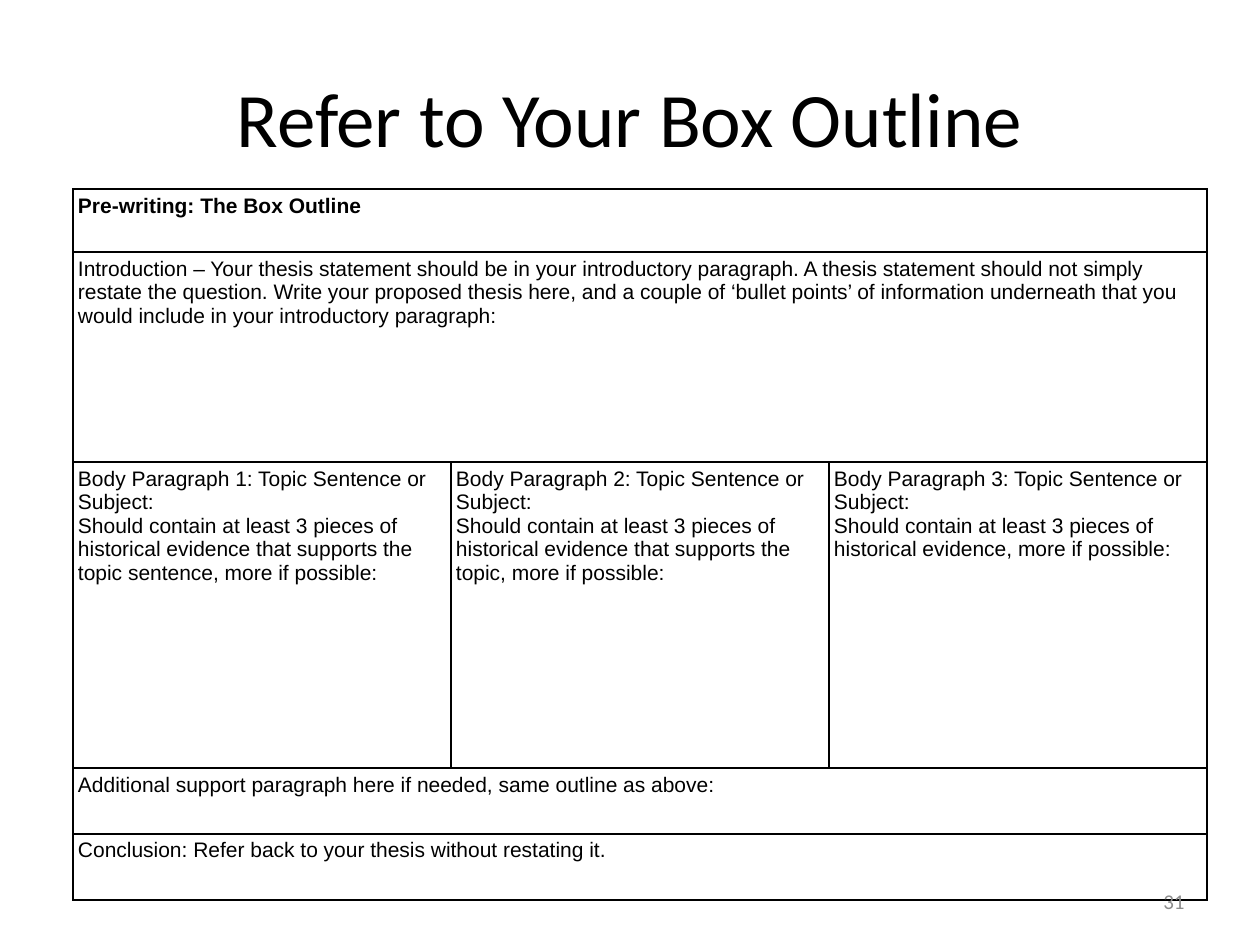
from lxml.etree import SubElement as Sub
from pptx import Presentation
from pptx.dml.color import RGBColor as Rgb
from pptx.enum.text import MSO_ANCHOR as Anchor, PP_ALIGN as Align
from pptx.oxml.ns import qn
from pptx.util import Pt

PX = 914400 / 126
INK = {"text": "000000", "line": "000000", "page": "8C8C8C"}


def px(*nums):
    return [round(n * PX) for n in nums]


def style(frame, font, size, ink, align=Align.LEFT, bold=False):
    for para in frame.paragraphs:
        para.alignment = align
        for run in para.runs:
            run.font.name = font
            run.font.size = Pt(size)
            run.font.bold = bold
            run.font.color.rgb = Rgb.from_string(INK[ink])


deck = Presentation()
deck.slide_width, deck.slide_height = px(1260, 945)
slide = deck.slides.add_slide(deck.slide_layouts[6])

evidence = "Should contain at least 3 pieces of historical evidence"
ends = [
    " that supports the topic sentence, more if possible:",
    " that supports the topic, more if possible:",
    ", more if possible:",
]
bodies = [
    f"Body Paragraph {n}: Topic Sentence or Subject:\n{evidence}{end}"
    for n, end in enumerate(ends, 1)
]
rows = [
    (63, ["Pre-writing: The Box Outline"]),
    (210, [
        "Introduction – Your thesis statement should be in your introductory "
        "paragraph. A thesis statement should not simply restate the question. "
        "Write your proposed thesis here, and a couple of ‘bullet points’ of "
        "information underneath that you would include in your introductory "
        "paragraph:"
    ]),
    (306, bodies),
    (66, ["Additional support paragraph here if needed, same outline as above:"]),
    (66, ["Conclusion: Refer back to your thesis without restating it."]),
]

high = sum(tall for tall, _ in rows)
table = slide.shapes.add_table(len(rows), 3, *px(73, 189, 1134, high)).table
table.first_row = False
table.horz_banding = False
for col in table.columns:
    col.width = px(378)[0]

for r, (tall, texts) in enumerate(rows):
    table.rows[r].height = px(tall)[0]
    if len(texts) == 1:
        table.cell(r, 0).merge(table.cell(r, 2))
    for c, text in enumerate(texts):
        cell = table.cell(r, c)
        cell.text_frame.text = text
        style(cell.text_frame, "Arial", 12, "text", bold=r == 0)
    for cell in table.rows[r].cells:
        cell.margin_left, cell.margin_right = px(5, 5)
        cell.margin_top, cell.margin_bottom = px(5, 5)
        props = cell._tc.get_or_add_tcPr()
        for side in "LRTB":
            line = Sub(props, qn(f"a:ln{side}"), w=str(Pt(1)))
            fill = Sub(line, qn("a:solidFill"))
            Sub(fill, qn("a:srgbClr"), val=INK["line"])
        cell.fill.background()

labels = [
    ("Refer to Your Box Outline", (63, 38, 1134, 157), 44, "text", Align.CENTER),
    ("31", (903, 876, 294, 50), 12, "page", Align.RIGHT),
]
for text, place, size, ink, align in labels:
    frame = slide.shapes.add_textbox(*px(*place)).text_frame
    frame.word_wrap = True
    frame.vertical_anchor = Anchor.MIDDLE
    frame.text = text
    style(frame, "Calibri", size, ink, align)

deck.save("out.pptx")
